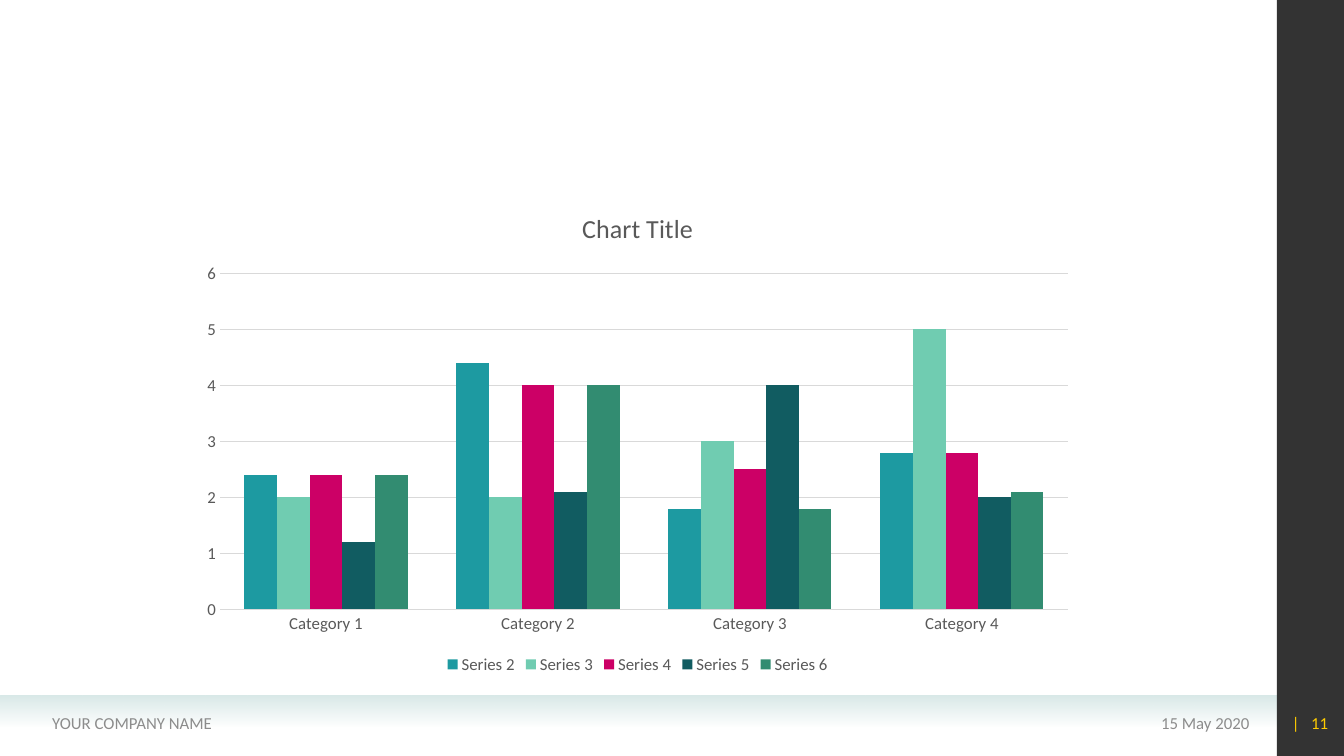
from lxml.etree import SubElement as Sub
from pptx import Presentation
from pptx.chart.data import CategoryChartData as Data
from pptx.dml.color import RGBColor as RGB
from pptx.enum.chart import XL_CHART_TYPE as Kind, XL_LEGEND_POSITION as Spot
from pptx.enum.chart import XL_TICK_MARK as Tick
from pptx.enum.shapes import MSO_SHAPE as Form
from pptx.enum.text import MSO_ANCHOR as Anchor, PP_ALIGN as Align
from pptx.oxml.ns import qn
from pptx.util import Inches, Pt

MINT, BLACK = RGB(0xD9, 0xE9, 0xE8), RGB(0, 0, 0)
GREY, GOLD = RGB(0x8C, 0x8C, 0x8C), RGB(0xFF, 0xCC, 0x00)
DARK, PALE = RGB(0x59, 0x59, 0x59), RGB(0xD9, 0xD9, 0xD9)
TEAL, AQUA, PINK = RGB(0x1D, 0x9A, 0xA1), RGB(0x70, 0xCC, 0xB1), RGB(0xCC, 0, 0x66)
DEEP, GREEN = RGB(0x11, 0x5C, 0x61), RGB(0x32, 0x8C, 0x71)
FONT = "Calibri"

# Content
TITLE = "Chart Title"
CATS = ["Category 1", "Category 2", "Category 3", "Category 4"]
SERIES = [
    ("Series 2", TEAL, (2.4, 4.4, 1.8, 2.8)),
    ("Series 3", AQUA, (2, 2, 3, 5)),
    ("Series 4", PINK, (2.4, 4, 2.5, 2.8)),
    ("Series 5", DEEP, (1.2, 2.1, 4, 2)),
    ("Series 6", GREEN, (2.4, 4, 1.8, 2.1)),
]
# Footer: left, width, alignment, colour, runs as (text, letter spacing in points)
FOOT = [
    (9.1, 3.39, Align.RIGHT, GREY, [("15 May 2020", 0)]),
    (0.42, 4.9, Align.LEFT, GREY, [("YOUR COMPANY NAME", 0)]),
    (12.6, 0.67, Align.RIGHT, GOLD, [("|", 0), (" ", 5.4), ("11", 0)]),
]

# Layout
WIDE, HIGH = 13.33, 7.5
SIDE = WIDE * 0.05
MAIN = WIDE - SIDE
BAND = HIGH * 0.92
LINE = 6.97

deck = Presentation()
deck.slide_width, deck.slide_height = Inches(WIDE), Inches(HIGH)
slide = deck.slides.add_slide(deck.slide_layouts[6])


def style(font, size, color):
    font.name, font.size, font.bold = FONT, Pt(size), False
    font.color.rgb = color


def block(*box):
    shape = slide.shapes.add_shape(Form.RECTANGLE, *map(Inches, box))
    shape.shadow.inherit = False
    shape.line.fill.background()
    return shape


def fade(shape, share):
    """Set the opacity of the last colour in the shape's fill."""
    color = list(shape.fill._xPr.iter(qn("a:srgbClr")))[-1]
    Sub(color, qn("a:alpha"), val=str(share * 1000))


# Footer band and side bar
band = block(0, BAND, MAIN, 0.31)
band.fill.gradient()
band.fill.gradient_angle = 270
for stop, place in zip(band.fill.gradient_stops, (0, 1)):
    stop.color.rgb, stop.position = MINT, place
fade(band, 0)

bar = block(MAIN, 0, SIDE, HIGH)
bar.fill.solid()
bar.fill.fore_color.rgb = BLACK
fade(bar, 80)

# Footer texts
for left, width, align, color, runs in FOOT:
    box = slide.shapes.add_textbox(*map(Inches, (left, LINE, width, 0.4)))
    frame = box.text_frame
    frame.word_wrap, frame.vertical_anchor = True, Anchor.MIDDLE
    para = frame.paragraphs[0]
    para.alignment = align
    for text, gap in runs:
        run = para.add_run()
        run.text = text
        style(run.font, 12, color)
        if gap:
            run.font._element.set("spc", str(round(gap * 100)))

# Chart
data = Data()
data.categories = CATS
for name, _, vals in SERIES:
    data.add_series(name, vals)
area = map(Inches, (1.88, 1.89, 8.89, 4.84))
chart = slide.shapes.add_chart(Kind.COLUMN_CLUSTERED, *area, data).chart
style(chart.font, 10, BLACK)

chart.has_title = True
run = chart.chart_title.text_frame.paragraphs[0].add_run()
run.text = TITLE
style(run.font, 18.6, DARK)
chart.chart_title.include_in_layout = False

chart.has_legend = True
chart.legend.position = Spot.BOTTOM
chart.legend.include_in_layout = False
style(chart.legend.font, 12, DARK)

plot = chart.plots[0]
plot.gap_width, plot.overlap, plot.vary_by_categories = 150, 0, False
for item, (_, color, _) in zip(plot.series, SERIES):
    item.format.fill.solid()
    item.format.fill.fore_color.rgb = color

# Axes
for axis in (chart.category_axis, chart.value_axis):
    axis.major_tick_mark = axis.minor_tick_mark = Tick.NONE
    axis.format.line.fill.background()
    style(axis.tick_labels.font, 12, DARK)
scale = chart.value_axis
scale.minimum_scale, scale.maximum_scale, scale.major_unit = 0, 6, 1
scale.has_major_gridlines = True
grid = scale.major_gridlines.format.line
grid.color.rgb, grid.width = PALE, Pt(0.75)

deck.save("out.pptx")
